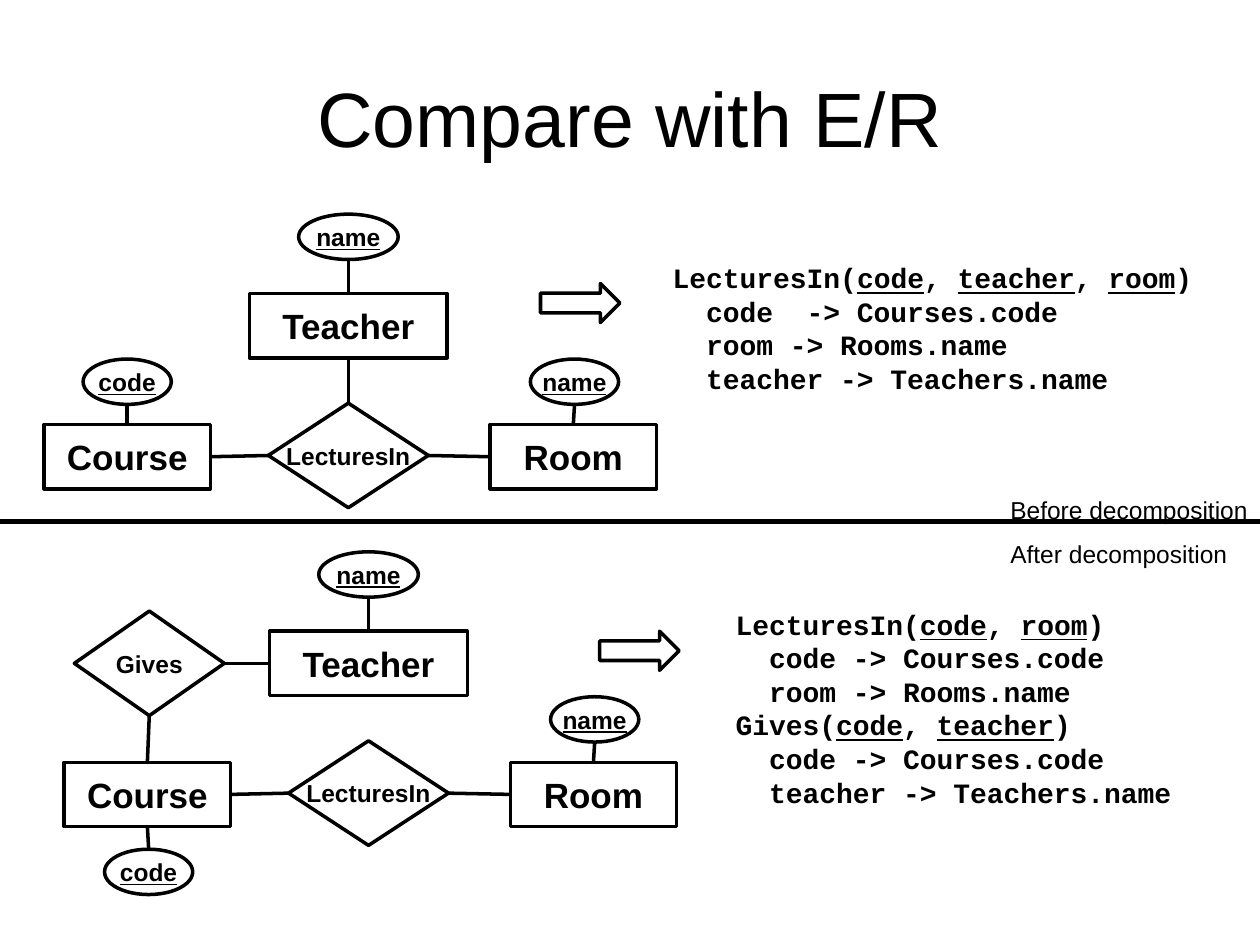
from pptx import Presentation
from pptx.dml.color import RGBColor
from pptx.enum.shapes import MSO_CONNECTOR as Connector, MSO_SHAPE as Shape
from pptx.enum.text import MSO_ANCHOR as Anchor, MSO_AUTO_SIZE as AutoSize, PP_ALIGN as Align
from pptx.util import Inches, Pt
from lxml.etree import SubElement
from pptx.oxml.ns import qn

BLACK = RGBColor(0, 0, 0)
TOP, LEFT, BOTTOM, RIGHT = range(4)

BEFORE_SCHEMA = """LecturesIn(_code_, _teacher_, _room_)
  code  -> Courses.code
  room -> Rooms.name
  teacher -> Teachers.name"""
AFTER_SCHEMA = """LecturesIn(_code_, _room_)
  code -> Courses.code
  room -> Rooms.name
Gives(_code_, _teacher_)
  code -> Courses.code
  teacher -> Teachers.name"""


class DiagramSlide:
    """Draws E/R diagram elements on one slide in a single black outline style."""

    body_font = "Arial"
    code_font = "Courier New"
    line_width = 2

    def __init__(self, slide):
        self.slide = slide

    def format_font(self, font, size, name=body_font, bold=False, underline=False):
        font.name, font.size, font.bold = name, Pt(size), bold
        font.underline = underline
        font.color.rgb = BLACK

    def outline(self, kind, left, top, width, height):
        shape = self.slide.shapes.add_shape(
            kind, Inches(left), Inches(top), Inches(width), Inches(height))
        shape.shadow.inherit = False
        shape.fill.background()
        shape.line.color.rgb = BLACK
        shape.line.width = Pt(self.line_width)
        return shape

    def node(self, kind, text, left, top, width, height, size=14, underline=False):
        shape = self.outline(kind, left, top, width, height)
        frame = shape.text_frame
        frame.word_wrap = False
        frame.vertical_anchor = Anchor.MIDDLE
        frame.text = text
        paragraph = frame.paragraphs[0]
        paragraph.alignment = Align.CENTER
        self.format_font(paragraph.runs[0].font, size, bold=True, underline=underline)
        return shape

    def entity(self, text, left, top, width=1.32):
        return self.node(Shape.RECTANGLE, text, left, top, width, 0.51, size=20)

    def attribute(self, text, left, top, width=0.7):
        return self.node(Shape.OVAL, text, left, top, width, 0.36, underline=True)

    def relationship(self, text, left, top, width=1.27):
        return self.node(Shape.DIAMOND, text, left, top, width, 0.83)

    def line(self, start, end, width=line_width):
        connector = self.slide.shapes.add_connector(Connector.STRAIGHT, *start, *end)
        connector.line.color.rgb = BLACK
        connector.line.width = Pt(width)
        SubElement(connector._element.spPr, qn("a:effectLst"))
        return connector

    def side_middle(self, shape, side):
        x = shape.left + {LEFT: 0, RIGHT: shape.width}.get(side, shape.width // 2)
        y = shape.top + {TOP: 0, BOTTOM: shape.height}.get(side, shape.height // 2)
        return x, y

    def join(self, first, first_side, second, second_side):
        connector = self.line(self.side_middle(first, first_side),
                              self.side_middle(second, second_side))
        connector.begin_connect(first, first_side)
        if second.auto_shape_type != Shape.OVAL or second_side == TOP:
            connector.end_connect(second, second_side)

    def text_box(self, left, top, width, height, wrap=True):
        box = self.slide.shapes.add_textbox(
            Inches(left), Inches(top), Inches(width), Inches(height))
        box.text_frame.word_wrap = wrap
        return box.text_frame

    def title(self, text):
        frame = self.text_box(0.5, 0.3, 9, 1.25)
        frame.vertical_anchor = Anchor.MIDDLE
        frame.text = text
        frame.paragraphs[0].alignment = Align.CENTER
        self.format_font(frame.paragraphs[0].runs[0].font, 44)

    def captions(self, text, left, top, width, height):
        frame = self.text_box(left, top, width, height, wrap=False)
        frame.auto_size = AutoSize.SHAPE_TO_FIT_TEXT
        frame.text = text
        for paragraph in frame.paragraphs:
            paragraph.line_spacing = 1.5
            self.format_font(paragraph.runs[0].font, 14)

    def schema(self, text, left, top, width, height):
        frame = self.text_box(left, top, width, height)
        frame.auto_size = AutoSize.SHAPE_TO_FIT_TEXT
        paragraph = frame.paragraphs[0]
        paragraph.line_spacing = Pt(19.2)
        for row, line in enumerate(text.split("\n")):
            if row:
                paragraph.add_line_break()
            for index, part in enumerate(line.split("_")):
                run = paragraph.add_run()
                run.text = part
                self.format_font(run.font, 16, self.code_font, True, index % 2 == 1)

    def lecture_diagram(self, x, y):
        course = self.entity("Course", x, y + 1.67)
        room = self.entity("Room", x + 3.54, y + 1.67)
        teacher = self.entity("Teacher", x + 1.63, y + 0.63, 1.57)
        lectures = self.relationship("LecturesIn", x + 1.78, y + 1.5)
        room_name = self.attribute("name", x + 3.86, y + 1.15)
        teacher_name = self.attribute("name", x + 2.02, y, 0.79)
        self.join(room, TOP, room_name, BOTTOM)
        self.join(teacher, TOP, teacher_name, BOTTOM)
        self.join(course, RIGHT, lectures, LEFT)
        self.join(lectures, RIGHT, room, LEFT)
        return course, teacher, lectures


def main():
    presentation = Presentation()
    presentation.slide_width, presentation.slide_height = Inches(10), Inches(7.5)
    diagram = DiagramSlide(presentation.slides.add_slide(presentation.slide_layouts[6]))
    diagram.title("Compare with E/R")

    course, teacher, lectures = diagram.lecture_diagram(0.35, 1.7)
    code = diagram.attribute("code", 0.66, 2.85)
    diagram.join(course, TOP, code, BOTTOM)
    diagram.join(lectures, TOP, teacher, BOTTOM)

    course, teacher, lectures = diagram.lecture_diagram(0.51, 4.38)
    code = diagram.attribute("code", 0.83, 6.74)
    gives = diagram.relationship("Gives", 0.59, 4.85, 1.19)
    diagram.join(course, BOTTOM, code, TOP)
    diagram.join(gives, RIGHT, teacher, LEFT)
    diagram.join(course, TOP, gives, BOTTOM)

    for left, top in ((4.29, 2.25), (4.76, 5.01)):
        diagram.outline(Shape.RIGHT_ARROW, left, top, 0.63, 0.31)
    diagram.schema(BEFORE_SCHEMA, 5.24, 2.02, 4.45, 1.17)
    diagram.schema(AFTER_SCHEMA, 5.74, 4.77, 4.26, 1.7)

    middle = Inches(4.14)
    diagram.line((0, middle), (presentation.slide_width, middle), 3)
    diagram.captions("Before decomposition\nAfter decomposition", 7.92, 3.76, 2.1, 0.76)
    presentation.save("out.pptx")


if __name__ == "__main__":
    main()
